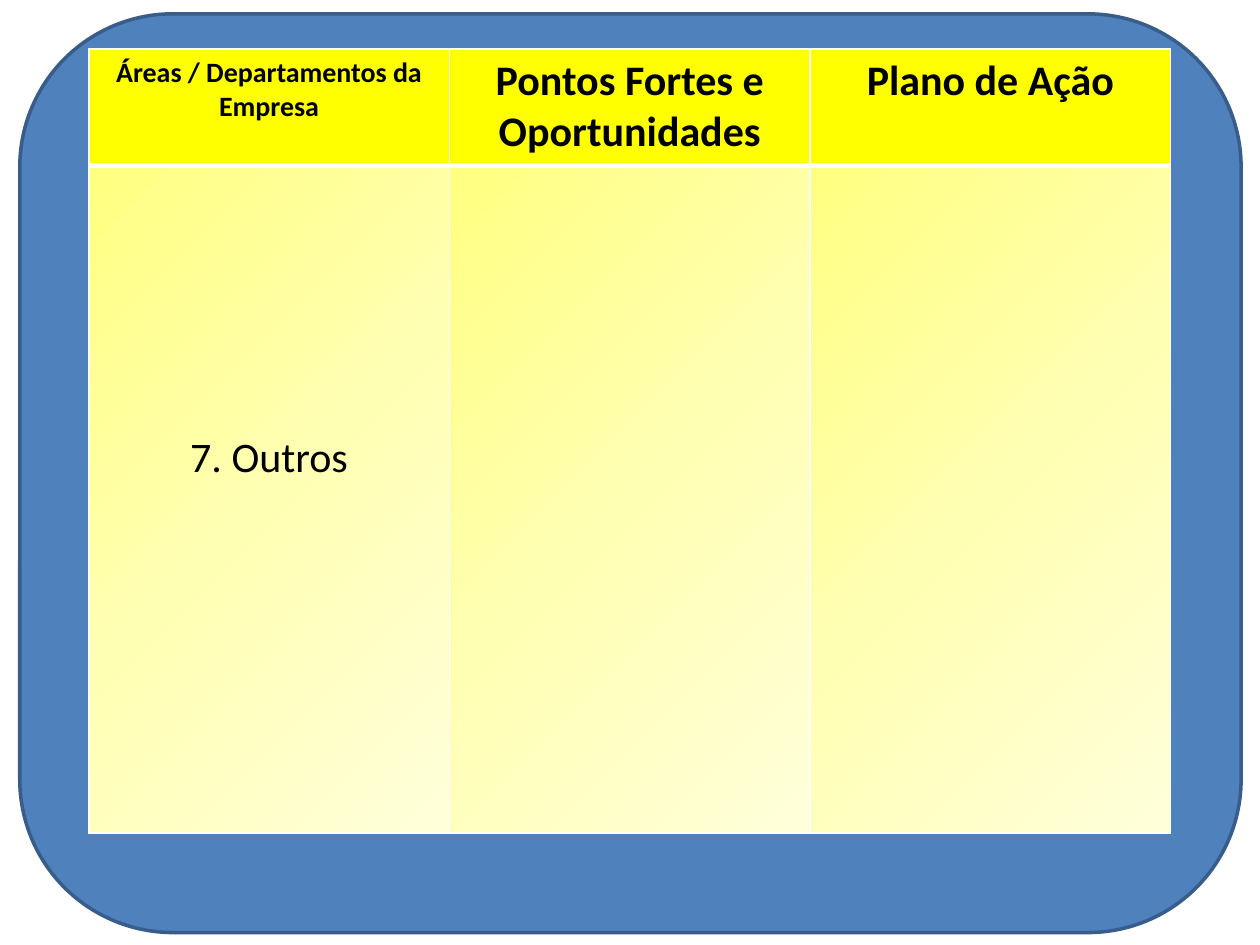
"""Build a slide with a framed table of company areas, strengths and action plan."""
from copy import deepcopy

from lxml.etree import SubElement
from pptx import Presentation
from pptx.dml.color import RGBColor
from pptx.enum.shapes import MSO_SHAPE as Shape
from pptx.enum.text import PP_ALIGN as Align
from pptx.oxml.ns import qn
from pptx.util import Cm, Pt

BLUE = RGBColor(0x4F, 0x81, 0xBD)
NAVY = RGBColor(0x38, 0x5D, 0x8A)
YELLOW = RGBColor(0xFF, 0xFF, 0x00)
BLACK = RGBColor(0x00, 0x00, 0x00)
WHITE = RGBColor(0xFF, 0xFF, 0xFF)
FADE = [
    (0, RGBColor(0xFF, 0xFF, 0xDA)),
    (0.5, RGBColor(0xFF, 0xFF, 0xB3)),
    (1, RGBColor(0xFF, 0xFF, 0x80)),
]
HEADINGS = [
    (["Áreas / Departamentos da Empresa"], 16),
    (["Pontos Fortes e", "Oportunidades"], 24),
    (["Plano de Ação"], 24),
]
ROW_HEIGHTS = [Cm(2.34), Cm(13.46)]
COLUMN_WIDTH = Cm(7.27)
INSET = Cm(0.13)


def add_frame(page):
    frame = page.shapes.add_shape(
        Shape.ROUNDED_RECTANGLE, Cm(0.4), Cm(0.28), Cm(24.62), Cm(18.52))
    frame.shadow.inherit = False
    frame.fill.solid()
    frame.fill.fore_color.rgb = BLUE
    frame.line.color.rgb = NAVY
    frame.line.width = Pt(2)


def set_borders(cell, top, bottom):
    properties = cell._tc.get_or_add_tcPr()
    for side, width in (("L", 1), ("R", 1), ("T", top), ("B", bottom)):
        line = SubElement(properties, qn(f"a:ln{side}"), w=str(Pt(width)))
        solid = SubElement(line, qn("a:solidFill"))
        SubElement(solid, qn("a:srgbClr"), val=str(WHITE))


def fill_fade(cell):
    cell.fill.gradient()
    cell.fill.gradient_angle = 135
    stop_list = cell._tc.tcPr.find(".//" + qn("a:gsLst"))
    stop_list.insert(1, deepcopy(stop_list[0]))
    for stop, (position, color) in zip(cell.fill.gradient_stops, FADE):
        stop.position = position
        stop.color.rgb = color


def write_cell(cell, lines, size, bold):
    cell.text = "\n".join(lines)
    for para in cell.text_frame.paragraphs:
        para.alignment = Align.CENTER
        para.font.name = "Calibri"
        para.font.size = Pt(size)
        para.font.bold = bold
        para.font.color.rgb = BLACK


def add_plan_table(page):
    columns = len(HEADINGS)
    table = page.shapes.add_table(
        len(ROW_HEIGHTS), columns, Cm(1.79), Cm(0.99),
        COLUMN_WIDTH * columns, sum(ROW_HEIGHTS)).table
    for row, height in zip(table.rows, ROW_HEIGHTS):
        row.height = height
    for cell in table.iter_cells():
        cell.margin_left = cell.margin_right = INSET
        cell.margin_top = cell.margin_bottom = INSET
    for index, (lines, size) in enumerate(HEADINGS):
        table.columns[index].width = COLUMN_WIDTH
        heading, body = table.cell(0, index), table.cell(1, index)
        set_borders(heading, top=1, bottom=3)
        heading.fill.solid()
        heading.fill.fore_color.rgb = YELLOW
        write_cell(heading, lines, size, bold=True)
        set_borders(body, top=3, bottom=1)
        fill_fade(body)
    area = table.cell(1, 0)
    area.margin_top = Cm(5.4)
    write_cell(area, ["7. Outros"], 24, bold=False)


def main():
    deck = Presentation()
    deck.slide_width, deck.slide_height = Cm(25.4), Cm(19.05)
    page = deck.slides.add_slide(deck.slide_layouts[6])
    add_frame(page)
    add_plan_table(page)
    deck.save("out.pptx")


if __name__ == "__main__":
    main()
